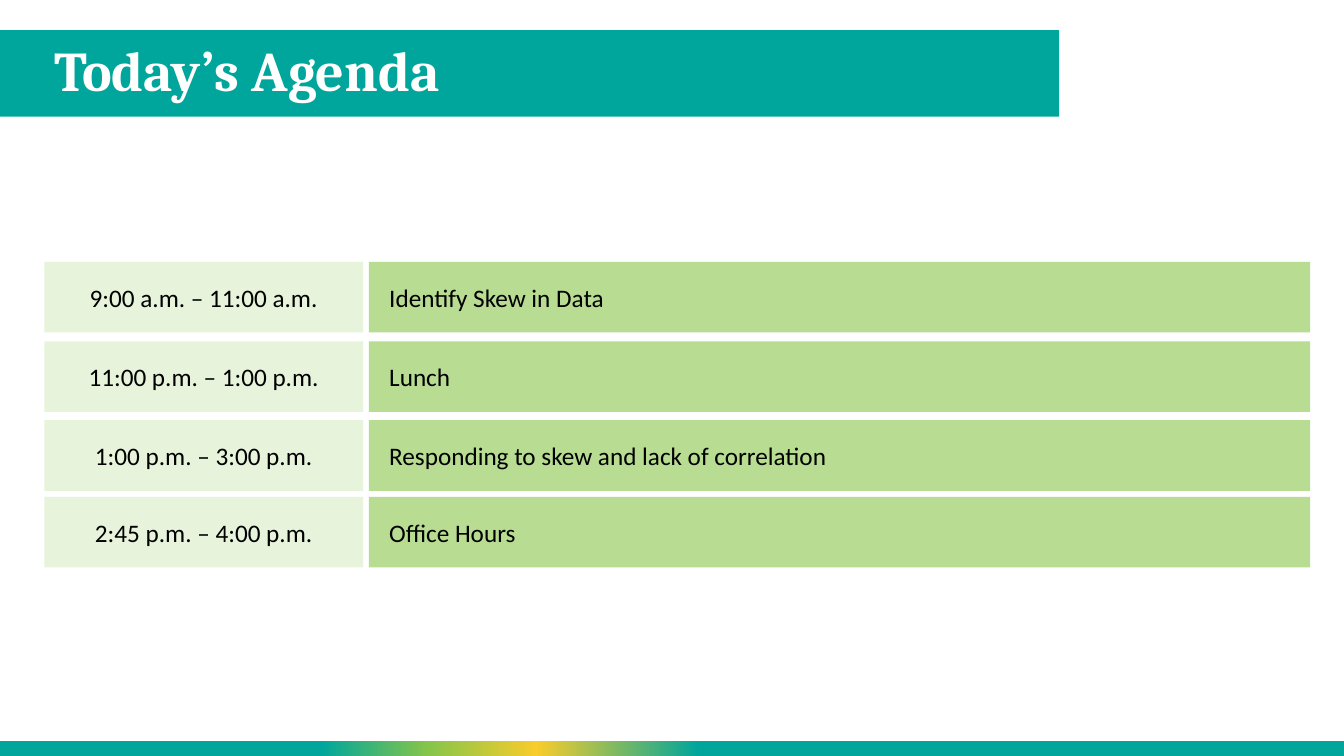
"""Build the agenda slide with a title banner, timed rows and a gradient footer."""
from dataclasses import dataclass

from lxml import etree
from pptx import Presentation
from pptx.dml.color import RGBColor
from pptx.enum.shapes import MSO_SHAPE
from pptx.enum.text import MSO_ANCHOR, MSO_AUTO_SIZE, PP_ALIGN
from pptx.oxml.ns import qn
from pptx.shapes.autoshape import Shape
from pptx.slide import Slide
from pptx.util import Cm, Pt

RECTANGLE = MSO_SHAPE.RECTANGLE
MIDDLE = MSO_ANCHOR.MIDDLE
NO_AUTOFIT = MSO_AUTO_SIZE.NONE
LEFT, CENTER = PP_ALIGN.LEFT, PP_ALIGN.CENTER


@dataclass(frozen=True)
class Theme:
    teal: str = "00A69B"
    green: str = "87C54A"
    yellow: str = "F8CC2B"
    time_fill: str = "E7F3DB"
    topic_fill: str = "B7DC92"
    white: str = "FFFFFF"
    black: str = "000000"
    title_font: str = "Cambria"
    body_font: str = "Calibri"
    title_size: int = 40
    body_size: int = 18


@dataclass(frozen=True)
class Area:
    left: float
    top: float
    width: float
    height: float


@dataclass(frozen=True)
class Session:
    top: float
    time: str
    topic: str


THEME = Theme()
PAGE_WIDTH, PAGE_HEIGHT = 33.87, 19.05
BANNER = Area(-0.03, 0.76, 26.72, 2.18)
TITLE = Area(1.12, 0.76, 25.55, 2.18)
FOOTER = Area(-0.03, 18.67, 33.9, 0.38)
FOOTER_STOPS = (
    (0, THEME.teal), (24, THEME.teal), (32, THEME.green),
    (40, THEME.yellow), (52, THEME.teal), (100, THEME.teal),
)
TIME_LEFT, TIME_WIDTH = 1.12, 8.03
TOPIC_LEFT, TOPIC_WIDTH = 9.3, 23.72
ROW_HEIGHT = 1.78
SESSIONS = (
    Session(6.6, "9:00 a.m. – 11:00 a.m.", "Identify Skew in Data"),
    Session(8.6, "11:00 p.m. – 1:00 p.m.", "Lunch"),
    Session(10.59, "1:00 p.m. – 3:00 p.m.", "Responding to skew and lack of correlation"),
    Session(12.52, "2:45 p.m. – 4:00 p.m.", "Office Hours"),
)


def add_bar(page: Slide, area: Area, color: str) -> Shape:
    bar = page.shapes.add_shape(
        RECTANGLE, Cm(area.left), Cm(area.top), Cm(area.width), Cm(area.height)
    )
    bar.shadow.inherit = False
    bar.line.fill.background()
    bar.fill.solid()
    bar.fill.fore_color.rgb = RGBColor.from_string(color)
    return bar


def write_text(
    box: Shape,
    text: str,
    *,
    font: str = THEME.body_font,
    size: int = THEME.body_size,
    color: str = THEME.black,
    bold: bool = False,
    align: PP_ALIGN = LEFT,
    side_inset: float = 0.25,
    line_spacing: float = 1.0,
) -> None:
    frame = box.text_frame
    frame.word_wrap = True
    frame.auto_size = NO_AUTOFIT
    frame.vertical_anchor = MIDDLE
    frame.margin_left = frame.margin_right = Cm(side_inset)
    frame.margin_top = frame.margin_bottom = Cm(0.13)
    para = frame.paragraphs[0]
    para.alignment = align
    para.line_spacing = line_spacing
    span = para.add_run()
    span.text = text
    span.font.name = font
    span.font.size = Pt(size)
    span.font.bold = bold
    span.font.color.rgb = RGBColor.from_string(color)


def apply_gradient(bar: Shape, stops: tuple[tuple[int, str], ...]) -> None:
    bar.fill.gradient()
    bar.fill.gradient_angle = 0
    stop_list = next(bar.element.iter(qn("a:gsLst")))
    for stop in list(stop_list):
        stop_list.remove(stop)
    for percent, color in stops:
        stop = etree.SubElement(stop_list, qn("a:gs"), pos=str(percent * 1000))
        etree.SubElement(stop, qn("a:srgbClr"), val=color)


def add_title(page: Slide, text: str) -> None:
    title = page.shapes.title
    title.left, title.top = Cm(TITLE.left), Cm(TITLE.top)
    title.width, title.height = Cm(TITLE.width), Cm(TITLE.height)
    write_text(
        title, text, font=THEME.title_font, size=THEME.title_size,
        color=THEME.white, bold=True, line_spacing=0.9,
    )
    banner = add_bar(page, BANNER, THEME.teal)
    title.element.addprevious(banner.element)


def add_session(page: Slide, session: Session) -> None:
    time_area = Area(TIME_LEFT, session.top, TIME_WIDTH, ROW_HEIGHT)
    topic_area = Area(TOPIC_LEFT, session.top, TOPIC_WIDTH, ROW_HEIGHT)
    write_text(add_bar(page, time_area, THEME.time_fill), session.time, align=CENTER)
    write_text(add_bar(page, topic_area, THEME.topic_fill), session.topic, side_inset=0.51)


def main() -> None:
    deck = Presentation()
    deck.slide_width, deck.slide_height = Cm(PAGE_WIDTH), Cm(PAGE_HEIGHT)
    page = deck.slides.add_slide(deck.slide_layouts.get_by_name("Title Only"))
    add_title(page, "Today’s Agenda")
    apply_gradient(add_bar(page, FOOTER, THEME.teal), FOOTER_STOPS)
    for session in SESSIONS:
        add_session(page, session)
    deck.save("out.pptx")


if __name__ == "__main__":
    main()
